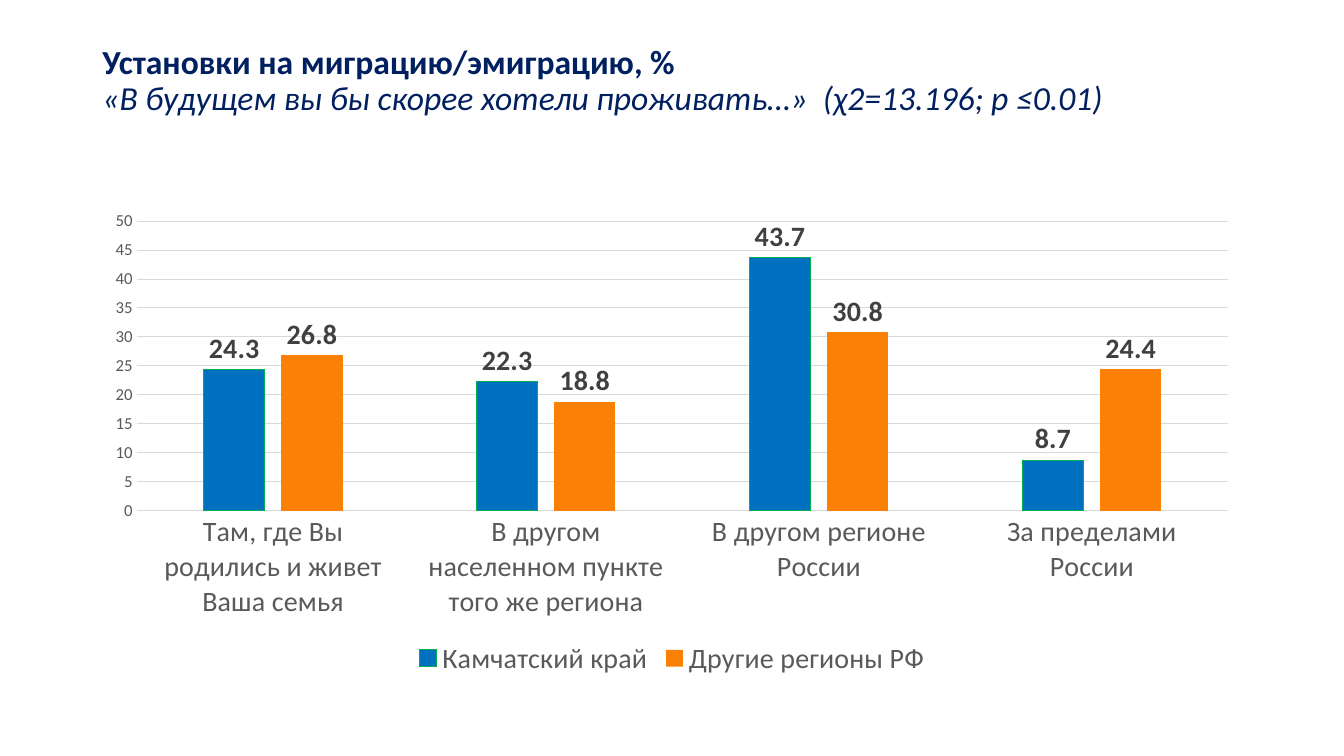
from pptx import Presentation
from pptx import util as u
from pptx.chart.data import CategoryChartData
from pptx.dml.color import RGBColor
from pptx.enum import chart as ch, text

NAVY = RGBColor(0x00, 0x20, 0x60)
BLUE = RGBColor(0x00, 0x70, 0xC0)
GREEN = RGBColor(0x00, 0xB0, 0x50)
ORANGE = RGBColor(0xFA, 0x80, 0x06)
DARK = RGBColor(0x40, 0x40, 0x40)
GREY = RGBColor(0x59, 0x59, 0x59)
LIGHT = RGBColor(0xD9, 0xD9, 0xD9)
FONT = "Calibri"


def style(font, size, color, bold=False, italic=False):
    font.name = FONT
    font.size = u.Pt(size)
    font.color.rgb = color
    font.bold = bold
    font.italic = italic


deck = Presentation()
deck.slide_width = u.Cm(33.87)
deck.slide_height = u.Cm(19.05)
slide = deck.slides.add_slide(deck.slide_layouts[6])
left, width = u.Cm(2.33), u.Cm(29.21)

heading = slide.shapes.add_textbox(left, u.Cm(1.02), width, u.Cm(3.02)).text_frame
heading.word_wrap = True
heading.vertical_anchor = text.MSO_ANCHOR.TOP
heading.text = (
    "Установки на миграцию/эмиграцию, %\n"
    "«В будущем вы бы скорее хотели проживать…»  (χ2=13.196; p ≤0.01)"
)
topic, question = heading.paragraphs
for line, bold in ((topic, True), (question, False)):
    line.line_spacing = 0.9
    style(line.runs[0].font, 24, NAVY, bold=bold, italic=not bold)

survey = CategoryChartData(number_format="General")
survey.categories = [
    "Там, где Вы родились и живет Ваша семья",
    "В другом населенном пункте того же региона",
    "В другом регионе России",
    "За пределами России",
]
survey.add_series("Камчатский край", (24.3, 22.3, 43.7, 8.7))
survey.add_series("Другие регионы РФ", (26.8, 18.8, 30.8, 24.4))
migration = slide.shapes.add_chart(
    ch.XL_CHART_TYPE.COLUMN_CLUSTERED, left, u.Cm(5.08), width, u.Cm(12.09), survey
).chart
migration.has_title = False
migration.font.name = FONT
migration.font.size = u.Pt(10)

migration.has_legend = True
migration.legend.position = ch.XL_LEGEND_POSITION.BOTTOM
migration.legend.include_in_layout = False
style(migration.legend.font, 20, GREY)

places, percent = migration.category_axis, migration.value_axis
for axis, size in ((places, 20), (percent, 12)):
    axis.major_tick_mark = axis.minor_tick_mark = ch.XL_TICK_MARK.NONE
    style(axis.tick_labels.font, size, GREY)
percent.minimum_scale = 0
percent.maximum_scale = 50
percent.major_unit = 5
percent.format.line.fill.background()
percent.has_major_gridlines = True
for rule in (places.format.line, percent.major_gridlines.format.line):
    rule.color.rgb = LIGHT
    rule.width = u.Pt(0.75)

bars = migration.plots[0]
bars.gap_width = 219
bars.overlap = -27
bars.vary_by_categories = False
for region, color in zip(bars.series, (BLUE, ORANGE)):
    region.invert_if_negative = False
    region.format.fill.solid()
    region.format.fill.fore_color.rgb = color
    labels = region.data_labels
    labels.show_value = True
    labels.position = ch.XL_LABEL_POSITION.OUTSIDE_END
    style(labels.font, 20, DARK, bold=True)
kamchatka, others = bars.series
kamchatka.format.line.color.rgb = GREEN
kamchatka.format.line.width = u.Pt(0.75)
others.format.line.fill.background()

deck.save("out.pptx")
